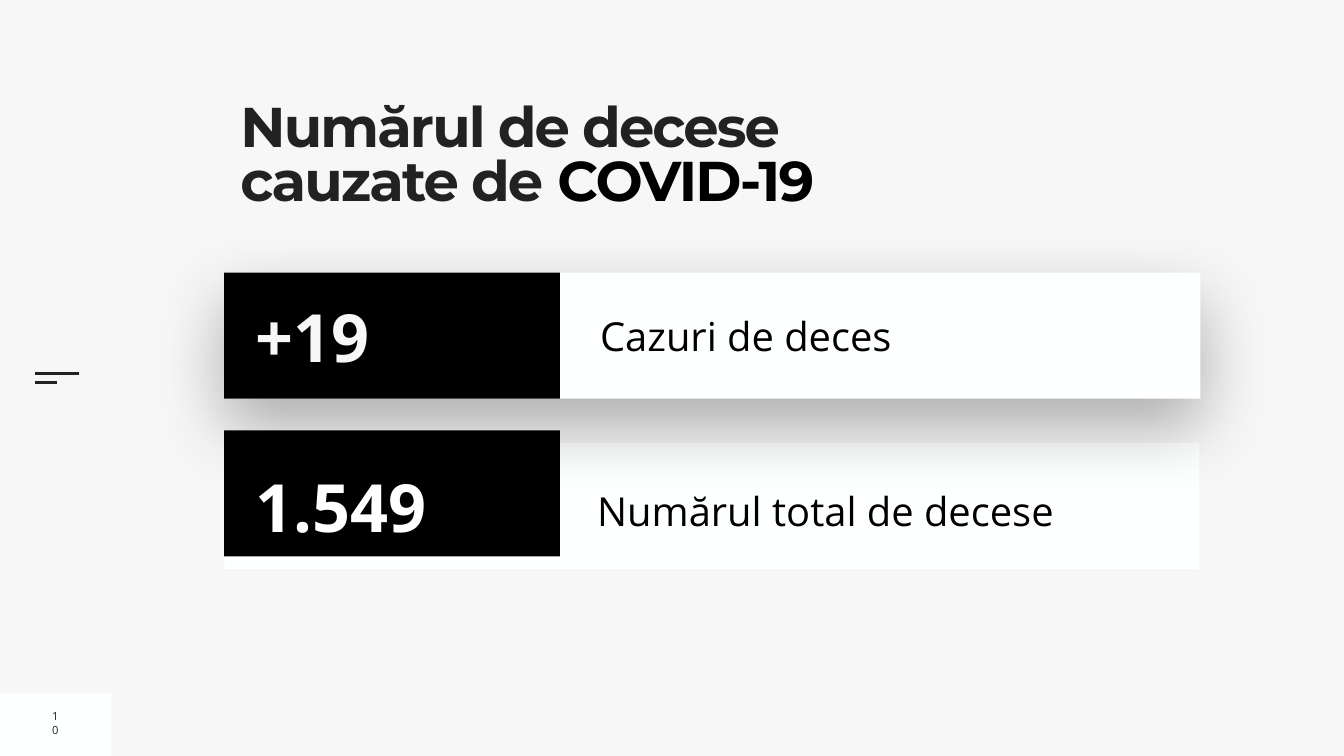
import pptx
import pptx.dml.color
import pptx.enum.shapes
import pptx.enum.text
import pptx.oxml
import pptx.oxml.ns
import pptx.util
from pptx.util import Inches

WHITE, BLACK, DARK, PALE = "FEFFFF", "000000", "222222", "F7F7F7"
MIDDLE = pptx.enum.text.MSO_ANCHOR.MIDDLE
TOP = pptx.enum.text.MSO_ANCHOR.TOP
DRAWING = pptx.oxml.ns.nsdecls("a")
SHADOW = (
    f'<a:effectLst {DRAWING}><a:outerShdw blurRad="1270000" dist="508000" '
    'dir="5400000" rotWithShape="0"><a:srgbClr val="000000">'
    '<a:alpha val="30000"/></a:srgbClr></a:outerShdw></a:effectLst>'
)


def color(value):
    return pptx.dml.color.RGBColor.from_string(value)


def set_attributes(target, values):
    for name, value in values.items():
        setattr(target, name, value)


def add_box(shapes, left, top, width, height, fill, shadow=False):
    """Add a borderless rectangle, with a soft shadow if wanted."""
    shape = shapes.add_shape(
        pptx.enum.shapes.MSO_SHAPE.RECTANGLE,
        Inches(left), Inches(top), Inches(width), Inches(height))
    shape.fill.solid()
    shape.fill.fore_color.rgb = color(fill)
    shape.line.fill.background()
    if shadow:
        shape._element.spPr.append(pptx.oxml.parse_xml(SHADOW))
    else:
        shape.shadow.inherit = False


def add_rule(shapes, left, top, width):
    connector = shapes.add_connector(
        pptx.enum.shapes.MSO_CONNECTOR.STRAIGHT,
        Inches(left), Inches(top), Inches(left + width), Inches(top))
    connector.line.color.rgb = color(DARK)
    connector.line.width = pptx.util.Pt(3)
    connector._element.spPr.append(pptx.oxml.parse_xml(f"<a:effectLst {DRAWING}/>"))


def add_text(shapes, left, top, width, height, runs, size, font="Open Sans",
             bold=False, inset=0.1, anchor=MIDDLE, tracking=None, **paragraph_format):
    """Add one paragraph made of (text, color) runs."""
    box = shapes.add_textbox(Inches(left), Inches(top), Inches(width), Inches(height))
    margins = {f"margin_{side}": Inches(inset)
               for side in ("left", "top", "right", "bottom")}
    set_attributes(box.text_frame,
                   {"word_wrap": True, "vertical_anchor": anchor, **margins})
    paragraph = box.text_frame.paragraphs[0]
    set_attributes(paragraph, paragraph_format)
    for text, fill in runs:
        run = paragraph.add_run()
        run.text = text
        set_attributes(run.font, {"name": font, "size": pptx.util.Pt(size), "bold": bold})
        run.font.color.rgb = color(fill)
        if tracking is not None:
            run._r.get_or_add_rPr().set("spc", str(tracking))


def add_margin(slide, left, top):
    """Menu mark and page number at the left edge."""
    add_box(slide.shapes, left, top + 13.76, 2.2, 1.24, WHITE)
    for offset, width in ((7.41, 0.88), (7.59, 0.44)):
        add_rule(slide.shapes, left + 0.69, top + offset, width)
    add_text(slide.shapes, left + 0.93, top + 14.09, 0.34, 0.51, [("10", DARK)], 16,
             alignment=pptx.enum.text.PP_ALIGN.CENTER)


def add_title(slide, left, top, width, height):
    add_text(slide.shapes, left, top, width, height,
             [("Numărul de decese cauzate de ", DARK), ("COVID-19", BLACK)],
             80, font="Montserrat", bold=True, inset=0, anchor=TOP,
             tracking=-270, line_spacing=0.8)


def add_row(slide, left, top, width, figure, label, figure_color, figure_top,
            label_box, panel_offset=0, shadow=False, **label_format):
    """White panel with a label, and a black block with a figure."""
    shapes = slide.shapes.add_group_shape().shapes
    add_box(shapes, left, top + panel_offset, width, 2.5, WHITE, shadow)
    label_left, label_top, label_width, label_height = label_box
    add_text(shapes, left + label_left, top + label_top, label_width, label_height,
             [(label, BLACK)], 57, **label_format)
    add_box(shapes, left, top, 6.66, 2.5, BLACK)
    add_text(shapes, left + 0.53, top + figure_top, 6.03, 1.8,
             [(figure, figure_color)], 95, bold=True)


def main():
    presentation = pptx.Presentation()
    set_attributes(presentation, {"slide_width": Inches(26.67), "slide_height": Inches(15)})
    slide = presentation.slides.add_slide(presentation.slide_layouts[6])
    slide.background.fill.solid()
    slide.background.fill.fore_color.rgb = color(PALE)

    add_margin(slide, 0, 0)
    add_title(slide, 4.77, 2.07, 13.01, 2.73)
    # The upper row comes last so that its shadow falls on the lower one
    add_row(slide, 4.45, 8.54, 19.35, "1.549", "Numărul total de decese", "FFFFFF", 0.6,
            (7.4, 0.89, 11.58, 1.12), panel_offset=0.25, inset=0,
            line_spacing=1.3, space_before=pptx.util.Pt(20))
    add_row(slide, 4.45, 5.41, 19.37, "+19", "Cazuri de deces", PALE, 0.35,
            (7.36, 0.66, 11.76, 1.16), shadow=True)
    presentation.save("out.pptx")


if __name__ == "__main__":
    main()
